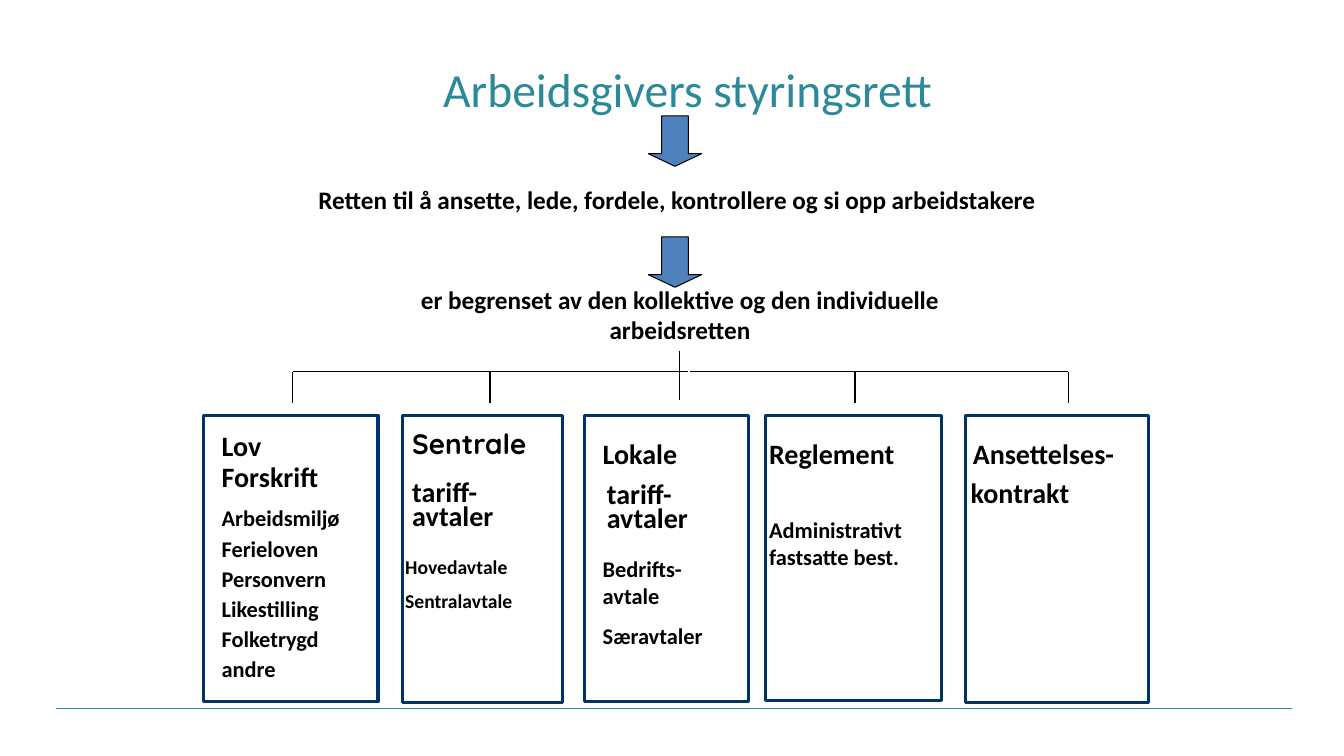
from pptx import Presentation
from pptx.dml.color import RGBColor
from pptx.enum.shapes import MSO_CONNECTOR, MSO_SHAPE
from pptx.enum.text import MSO_ANCHOR, PP_ALIGN
from pptx.oxml.ns import qn
from pptx.util import Emu, Pt
from lxml import etree

TEAL = RGBColor(0x2B, 0x89, 0x9A)
BLUE = RGBColor(0x4F, 0x81, 0xBD)
NAVY = RGBColor(0x00, 0x33, 0x66)
BLACK = RGBColor(0, 0, 0)
STRAIGHT = MSO_CONNECTOR.STRAIGHT
DOWN_ARROW = MSO_SHAPE.DOWN_ARROW
PROCESS = MSO_SHAPE.FLOWCHART_PROCESS
RECTANGLE = MSO_SHAPE.RECTANGLE
LEFT, CENTER = PP_ALIGN.LEFT, PP_ALIGN.CENTER
TOP, BOTTOM = MSO_ANCHOR.TOP, MSO_ANCHOR.BOTTOM
EMU_PER_PX = 9144


def px(*lengths):
    return [Emu(length * EMU_PER_PX) for length in lengths]


class Diagram:
    font = "Calibri"
    color = BLACK

    def __init__(self, slide):
        self.slide = slide

    def line(self, start, end, color=BLACK, width=0.75):
        connector = self.slide.shapes.add_connector(STRAIGHT, *px(*start, *end))
        connector.line.color.rgb = color
        connector.line.width = Pt(width)
        etree.SubElement(connector._element.spPr, qn("a:effectLst"))

    def shape(self, kind, area, line, width, fill=None):
        shape = self.slide.shapes.add_shape(kind, *px(*area))
        shape.shadow.inherit = False
        shape.line.color.rgb = line
        shape.line.width = Pt(width)
        if fill is None:
            shape.fill.background()
        else:
            shape.fill.solid()
            shape.fill.fore_color.rgb = fill
        return shape

    def arrow(self, area):
        arrow = self.shape(DOWN_ARROW, area, BLACK, 0.75, BLUE)
        arrow.adjustments[0], arrow.adjustments[1] = 0.5, 0.25

    def text(self, area, lines, size, bold=True, font=None, color=None,
             align=LEFT, anchor=TOP, spacing=1.0, gap=0):
        frame = self.slide.shapes.add_textbox(*px(*area)).text_frame
        frame.word_wrap = True
        frame.vertical_anchor = anchor
        frame.text = "\n".join(lines)
        paragraph_format = {"alignment": align, "line_spacing": spacing}
        font_format = {"name": font or self.font, "size": Pt(size), "bold": bold}
        for index, paragraph in enumerate(frame.paragraphs):
            for name, value in paragraph_format.items():
                setattr(paragraph, name, value)
            paragraph.space_before = Pt(gap if index else 0)
            for name, value in font_format.items():
                setattr(paragraph.font, name, value)
            paragraph.font.color.rgb = color or self.color


def main():
    deck = Presentation()
    deck.slide_width, deck.slide_height = px(1333, 750)
    diagram = Diagram(deck.slides.add_slide(deck.slide_layouts[6]))

    diagram.line((56, 703), (1281, 703), TEAL, 1)
    diagram.text((257, 21, 850, 100), ["Arbeidsgivers styringsrett"], 34,
                 bold=False, color=TEAL, align=CENTER, anchor=BOTTOM)
    diagram.text((306, 178, 907, 40), [
        "Retten til å ansette, lede, fordele, kontrollere og si opp arbeidstakere"], 18)
    for arrow_top in (115, 235):
        diagram.arrow((643, arrow_top, 53, 50))
    diagram.text((341, 277, 667, 71), [
        "er begrenset av den kollektive og den individuelle arbeidsretten"],
        18, align=CENTER)

    trunk, crossbar = 674, 369
    diagram.line((trunk, 348), (trunk, crossbar))
    diagram.line((trunk, crossbar), (trunk, 397))
    diagram.line((682, crossbar), (291, crossbar))
    diagram.line((1059, crossbar), (684, crossbar))
    for branch in (290, 486, 848, 1060):
        diagram.line((branch, crossbar), (branch, 400))

    source_boxes = [
        (PROCESS, 202, 173, 284),
        (RECTANGLE, 399, 159, 285),
        (RECTANGLE, 580, 162, 284),
        (RECTANGLE, 759, 175, 283),
        (RECTANGLE, 958, 181, 285),
    ]
    for kind, left, width, height in source_boxes:
        diagram.shape(kind, (left, 412, width, height), NAVY, 2.25)

    headings = [
        ("Lov", 210, 420), ("Forskrift", 210, 451), ("Lokale", 588, 428),
        ("Reglement", 753, 428), ("Ansettelses-", 955, 428), ("kontrakt", 953, 467),
    ]
    for heading, left, top in headings:
        diagram.text((left, top, 180, 43), [heading], 20)
    diagram.text((399, 433, 175, 29), ["Sentrale"], 20, font="Quicksand", spacing=0.5)
    for left, top, width in ((399, 475, 142), (592, 477, 158)):
        diagram.text((left, top, width, 57), ["tariff-avtaler"], 20, spacing=0.7)

    diagram.text((210, 507, 165, 185), [
        "Arbeidsmiljø", "Ferieloven", "Personvern", "Likestilling", "Folketrygd", "andre"],
        16, spacing=0.5, gap=12)
    diagram.text((392, 546, 166, 69), ["Hovedavtale", "Sentralavtale"], 14, gap=7)
    diagram.text((588, 546, 150, 64), ["Bedrifts-avtale"], 16)
    diagram.text((588, 625, 150, 22), ["Særavtaler"], 16, spacing=0.45)
    diagram.text((753, 507, 189, 64), ["Administrativt fastsatte best."], 16)

    deck.save("out.pptx")


if __name__ == "__main__":
    main()
